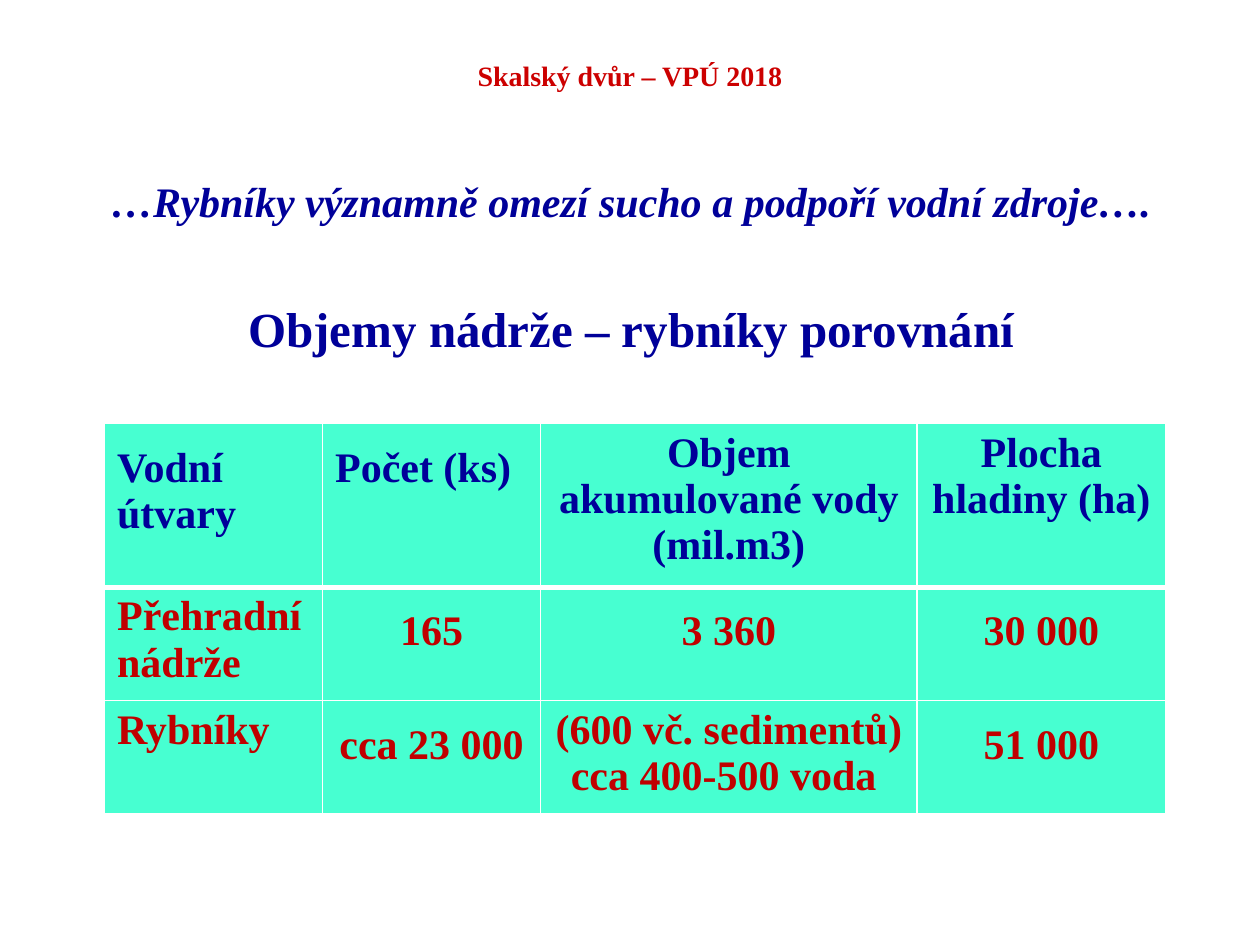
from lxml import etree
from pptx import Presentation
from pptx import util as u
from pptx.dml.color import RGBColor
from pptx.enum import text
from pptx.oxml import ns

FONT = "Times New Roman"
NAVY, RED, DARK_RED = "000099", "CC0000", "C00000"
MINT, WHITE = "47FFD1", "FFFFFF"
LEFT, CENTER = text.PP_ALIGN.LEFT, text.PP_ALIGN.CENTER
LOWERED = 0.17  # top margin of cells whose text starts lower

COLUMNS = [1.73, 1.73, 2.99, 1.97]
ROWS = [1.2, 0.87, 0.87]
# Each cell: text, alignment, top margin
CELLS = [
    [("Vodní útvary", LEFT, LOWERED), ("Počet (ks)", LEFT, LOWERED),
     ("Objem akumulované vody (mil.m3)", CENTER, 0.05),
     ("Plocha hladiny (ha)", CENTER, 0.05)],
    [("Přehradní nádrže", LEFT, 0.05), ("165", CENTER, LOWERED),
     ("3 360", CENTER, LOWERED), ("30 000", CENTER, LOWERED)],
    [("Rybníky", LEFT, 0.05), ("cca 23 000", CENTER, LOWERED),
     ("(600 vč. sedimentů)\ncca 400-500 voda ", CENTER, 0.05),
     ("51 000", CENTER, LOWERED)],
]


def rgb(value):
    return RGBColor.from_string(value)


def format_paragraph(paragraph, size, color, alignment=CENTER, italic=False):
    paragraph.alignment = alignment
    font = paragraph.font
    font.name, font.size = FONT, u.Pt(size)
    font.bold, font.italic = True, italic
    font.color.rgb = rgb(color)


def add_title(slide, box):
    title = slide.shapes.title
    title.left, title.top, title.width, title.height = map(u.Inches, box)
    frame = title.text_frame
    frame.text = "Skalský dvůr – VPÚ 2018"
    frame.vertical_anchor = text.MSO_ANCHOR.MIDDLE
    frame.margin_top, frame.margin_bottom = u.Inches(0.1), u.Inches(0.05)
    format_paragraph(frame.paragraphs[0], 16, RED)


def add_headings(slide, box):
    frame = slide.shapes.add_textbox(*map(u.Inches, box)).text_frame
    frame.word_wrap = True
    motto = frame.paragraphs[0]
    motto.text = "…Rybníky významně omezí sucho a podpoří vodní zdroje…."
    format_paragraph(motto, 24, NAVY, italic=True)
    heading = frame.add_paragraph()
    heading.text = "Objemy nádrže – rybníky porovnání"
    heading.space_before = u.Pt(41.5)
    format_paragraph(heading, 28, NAVY)


def set_borders(cell, widths):
    """Draw white borders; widths maps a side (L, R, T, B) to points."""
    properties = cell._tc.get_or_add_tcPr()
    for side, width in widths.items():
        line = etree.SubElement(properties, ns.qn(f"a:ln{side}"), w=str(u.Pt(width)))
        fill = etree.SubElement(line, ns.qn("a:solidFill"))
        etree.SubElement(fill, ns.qn("a:srgbClr"), val=WHITE)


def add_comparison_table(slide, left, top):
    table = slide.shapes.add_table(
        len(ROWS), len(COLUMNS), u.Inches(left), u.Inches(top),
        u.Inches(sum(COLUMNS)), u.Inches(sum(ROWS))).table
    for column, width in zip(table.columns, COLUMNS):
        column.width = u.Inches(width)
    for index, (row, height, contents) in enumerate(zip(table.rows, ROWS, CELLS)):
        row.height = u.Inches(height)
        color = DARK_RED if index else NAVY
        borders = {"L": 1, "R": 1, "T": 3 if index == 1 else 1,
                   "B": 1 if index else 3}
        for cell, (words, alignment, margin) in zip(row.cells, contents):
            set_borders(cell, borders)
            cell.fill.solid()
            cell.fill.fore_color.rgb = rgb(MINT)
            cell.margin_top = u.Inches(margin)
            cell.text_frame.text = words
            for paragraph in cell.text_frame.paragraphs:
                format_paragraph(paragraph, 24, color, alignment)


def main():
    presentation = Presentation()
    presentation.slide_width, presentation.slide_height = u.Inches(10), u.Inches(7.5)
    slide = presentation.slides.add_slide(presentation.slide_layouts[5])
    add_title(slide, (0.5, 0.3, 9, 0.54))
    add_headings(slide, (0.51, 1.34, 9, 1.5))
    add_comparison_table(slide, 0.83, 3.36)
    presentation.save("out.pptx")


if __name__ == "__main__":
    main()
